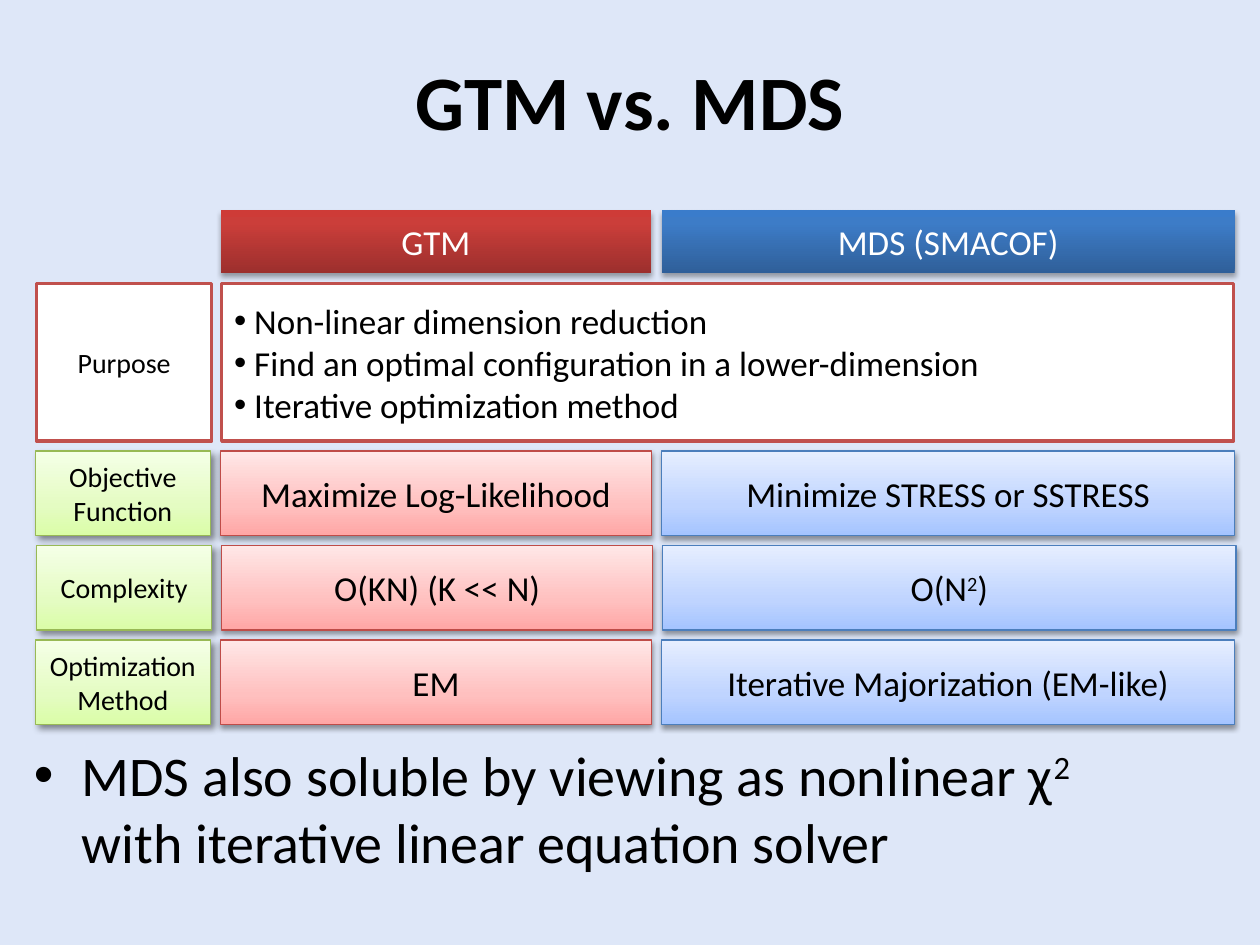
"""Build the "GTM vs. MDS" comparison slide."""
from lxml import etree
from pptx import Presentation
from pptx.dml.color import RGBColor
from pptx.enum.shapes import MSO_SHAPE
from pptx.enum.text import MSO_ANCHOR, PP_ALIGN
from pptx.oxml.ns import qn
from pptx.util import Inches, Pt

RECT = MSO_SHAPE.RECTANGLE
MIDDLE, TOP = MSO_ANCHOR.MIDDLE, MSO_ANCHOR.TOP
CENTER, LEFT = PP_ALIGN.CENTER, PP_ALIGN.LEFT
FONT = "Calibri"

BACKGROUND = RGBColor(0xDE, 0xE7, 0xF8)
BLACK = RGBColor(0x00, 0x00, 0x00)
WHITE = RGBColor(0xFF, 0xFF, 0xFF)
FRAME_RED = RGBColor(0xC0, 0x50, 0x4D)
RED_LINE = RGBColor(0xBF, 0x4C, 0x48)
BLUE_LINE = RGBColor(0x4B, 0x7E, 0xBC)
GREEN_LINE = RGBColor(0x98, 0xB9, 0x55)
RED_HEAD = [RGBColor(0x9C, 0x2F, 0x2D), RGBColor(0xCB, 0x3E, 0x3A), RGBColor(0xCE, 0x3B, 0x37)]
BLUE_HEAD = [RGBColor(0x2F, 0x5F, 0x99), RGBColor(0x3D, 0x7C, 0xC7), RGBColor(0x3A, 0x7C, 0xCB)]
RED_CELL = [RGBColor(0xFF, 0xA6, 0xA5), RGBColor(0xFF, 0xC0, 0xBF), RGBColor(0xFF, 0xE7, 0xE7)]
BLUE_CELL = [RGBColor(0xA4, 0xC4, 0xFF), RGBColor(0xBF, 0xD4, 0xFF), RGBColor(0xE6, 0xEE, 0xFF)]
GREEN_CELL = [RGBColor(0xDA, 0xFD, 0xA7), RGBColor(0xE4, 0xFC, 0xC2), RGBColor(0xF5, 0xFF, 0xE7)]

HEAD_SHADOW = (35, 3.1, 1.8, 90)
CELL_SHADOW = (38, 3.1, 1.6, 90)
LABEL_SHADOW = (43, 4, 3, 45)


def write(s, text, size, color=BLACK, align=CENTER, anchor=MIDDLE, indent=0):
    """Fill a shape with one paragraph per line; ^ marks surround superscripts."""
    tf = s.text_frame
    tf.word_wrap = True
    tf.vertical_anchor = anchor
    for i, line in enumerate(text.split("\n")):
        p = tf.add_paragraph() if i else tf.paragraphs[0]
        p.alignment = align
        if indent:
            pPr = p._p.get_or_add_pPr()
            pPr.set("marL", str(Inches(indent)))
            pPr.set("indent", str(-Inches(indent)))
            etree.SubElement(pPr, qn("a:buFont"), typeface="Arial")
            etree.SubElement(pPr, qn("a:buChar"), char="•")
        for j, part in enumerate(line.split("^")):
            r = p.add_run()
            r.text = part
            r.font.name, r.font.size = FONT, Pt(size)
            r.font.color.rgb = color
            if j % 2:
                r.font._element.set("baseline", "30000")


def add_box(left, top, width, height, colors, middle_stop=35, shadow=None, line=None, weight=0.75):
    """Add a rectangle with a plain or upward gradient fill."""
    s = slide.shapes.add_shape(RECT, Inches(left), Inches(top), Inches(width), Inches(height))
    s.shadow.inherit = False
    if len(colors) == 1:
        s.fill.solid()
        s.fill.fore_color.rgb = colors[0]
    else:
        s.fill.gradient()
        s.fill.gradient_angle = 90
        stops = s._element.spPr.find(".//" + qn("a:gsLst"))
        stops.clear()
        for position, color in zip((0, middle_stop, 100), colors):
            gs = etree.SubElement(stops, qn("a:gs"), pos=str(position * 1000))
            etree.SubElement(gs, qn("a:srgbClr"), val=str(color))
    if line is None:
        s.line.fill.background()
    else:
        s.line.color.rgb = line
        s.line.width = Pt(weight)
    if shadow:
        alpha, blur, distance, angle = shadow
        effects = s._element.spPr.find(qn("a:effectLst"))
        outer = etree.SubElement(effects, qn("a:outerShdw"), blurRad=str(Pt(blur)),
                                 dist=str(Pt(distance)), dir=str(angle * 60000), rotWithShape="0")
        color = etree.SubElement(outer, qn("a:srgbClr"), val=str(BLACK))
        etree.SubElement(color, qn("a:alpha"), val=str(alpha * 1000))
    return s


prs = Presentation()
prs.slide_width, prs.slide_height = Inches(10), Inches(7.5)
slide = prs.slides.add_slide(prs.slide_layouts[5])
slide.background.fill.solid()
slide.background.fill.fore_color.rgb = BACKGROUND

title = slide.shapes.title
title.left, title.top, title.width, title.height = Inches(0.5), Inches(0.17), Inches(9), Inches(1.25)
write(title, "GTM vs. MDS", 44)
title.text_frame.paragraphs[0].runs[0].font.bold = True

note = slide.shapes.add_textbox(Inches(0.17), Inches(5.83), Inches(9), Inches(1.45))
write(note, "MDS also soluble by viewing as nonlinear χ^2^ with iterative linear equation solver",
      32, align=LEFT, anchor=TOP, indent=0.38)

columns = [
    (0.28, 1.39, GREEN_CELL, GREEN_LINE, LABEL_SHADOW, 16),
    (1.75, 3.42, RED_CELL, RED_LINE, CELL_SHADOW, 20),
    (5.25, 4.55, BLUE_CELL, BLUE_LINE, CELL_SHADOW, 20),
]
headers = [("GTM", RED_HEAD), ("MDS (SMACOF)", BLUE_HEAD)]
for (text, colors), (left, width, *_) in zip(headers, columns[1:]):
    write(add_box(left, 1.67, width, 0.5, colors, 80, HEAD_SHADOW), text, 20, WHITE)

purpose = add_box(0.29, 2.25, 1.39, 1.25, [WHITE], line=FRAME_RED, weight=2)
write(purpose, "Purpose", 16)
goals = add_box(1.76, 2.25, 8.03, 1.25, [WHITE], line=FRAME_RED, weight=2)
write(goals, "Non-linear dimension reduction\n"
             "Find an optimal configuration in a lower-dimension\n"
             "Iterative optimization method", 20, align=LEFT, indent=0.16)

rows = [
    (0, ["Objective\nFunction", "Maximize Log-Likelihood", "Minimize STRESS or SSTRESS"]),
    (0.01, ["Complexity", "O(KN) (K << N)", "O(N^2^)"]),
    (0, ["Optimization\nMethod", "EM", "Iterative Majorization (EM-like)"]),
]
for i, (shift, texts) in enumerate(rows):
    for text, (left, width, colors, line, shadow, size) in zip(texts, columns):
        cell = add_box(left + shift, 3.58 + 0.75 * i, width, 0.67, colors, shadow=shadow, line=line)
        write(cell, text, size)

prs.save("out.pptx")
